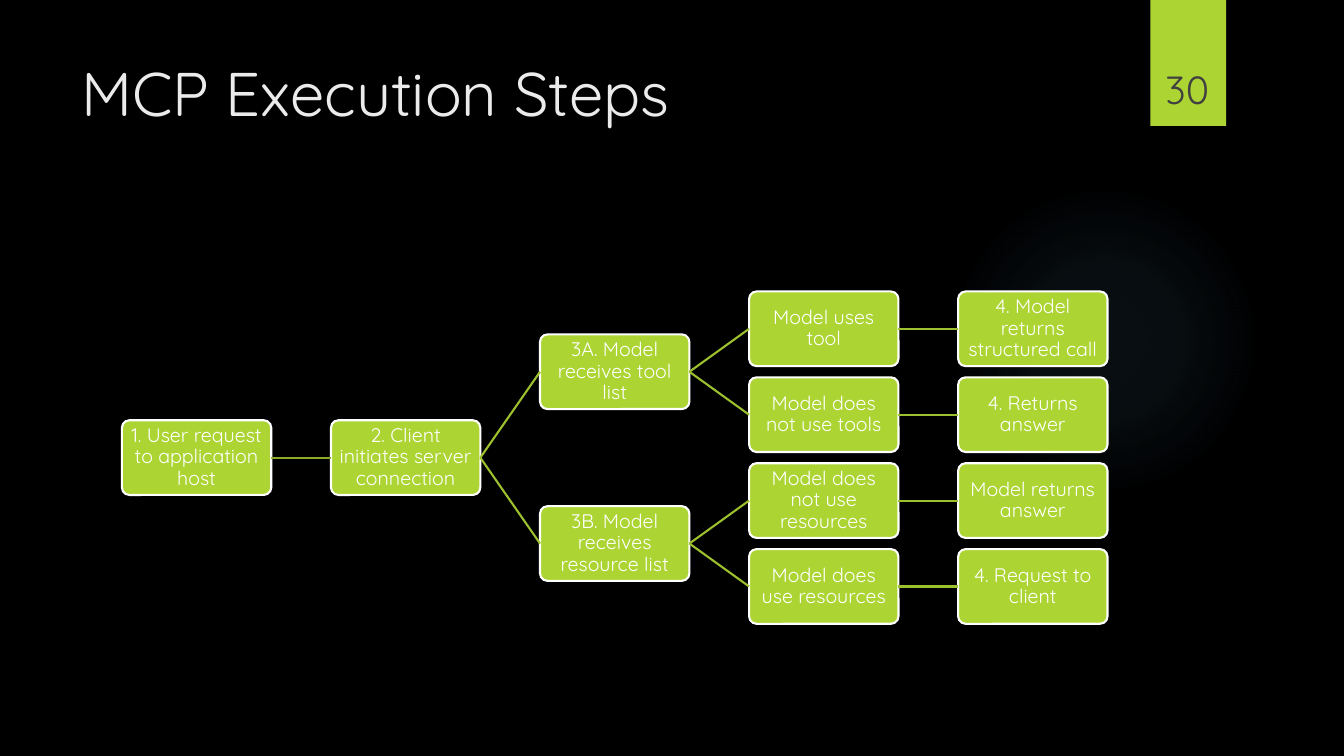
import lxml.etree
import pptx
import pptx.dml.color
import pptx.enum.shapes
import pptx.enum.text
import pptx.oxml
import pptx.oxml.ns
import pptx.util

Pt = pptx.util.Pt
SHAPE = pptx.enum.shapes.MSO_SHAPE
ALIGN = pptx.enum.text.PP_ALIGN
ANCHOR = pptx.enum.text.MSO_ANCHOR

# Content: each step is (text, following steps)
TITLE = "MCP Execution Steps"
NUMBER = "30"
STEPS = ("1. User request to application host", [
    ("2. Client initiates server connection", [
        ("3A. Model receives tool list", [
            ("Model uses tool", [("4. Model returns structured call", [])]),
            ("Model does not use tools", [("4. Returns answer", [])]),
        ]),
        ("3B. Model receives resource list", [
            ("Model does not use resources", [("Model returns answer", [])]),
            ("Model does use resources", [("4. Request to client", [])]),
        ]),
    ]),
])

COLORS = {"back": "000000", "green": "ACD433", "first": "8AAA29", "link": "9CC02E",
          "white": "FFFFFF", "title": "EBEBEB", "number": "404040", "glow": "7AC4F0"}
FONT = "Quicksand"
LEFT, TOP = 87.1, 208.2
BOX_W, BOX_H = 106.7, 53.35
COL_STEP, ROW_STEP = 149.33, 61.35
GLOW_STOPS = [(0, 7), (36, 6), (69, 0)]  # position and opacity, percent


def rgb(name):
    return pptx.dml.color.RGBColor.from_string(COLORS[name])


def add_shape(kind, x, y, w, h, fill, line=None):
    sp = slide.shapes.add_shape(kind, Pt(x), Pt(y), Pt(w), Pt(h))
    sp.shadow.inherit = False
    sp.fill.solid()
    sp.fill.fore_color.rgb = rgb(fill)
    if line:
        sp.line.color.rgb = rgb(line)
        sp.line.width = Pt(1.5)
    else:
        sp.line.fill.background()
    return sp


def set_text(sp, text, size, color, align, anchor, inset=(7.2, 3.6), spacing=1.0):
    tf = sp.text_frame
    side, edge = map(Pt, inset)
    frame = {"word_wrap": True, "vertical_anchor": anchor, "margin_left": side,
             "margin_right": side, "margin_top": edge, "margin_bottom": edge}
    for key, value in frame.items():
        setattr(tf, key, value)
    p = tf.paragraphs[0]
    p.alignment, p.line_spacing = align, spacing
    r = p.add_run()
    r.text = text
    for key, value in {"name": FONT, "size": Pt(size)}.items():
        setattr(r.font, key, value)
    r.font.color.rgb = rgb(color)


def add_glow(x, y, d):
    sp = add_shape(SHAPE.OVAL, x, y, d, d, "glow")
    stops = "".join(
        f'<a:gs pos="{pos * 1000}"><a:srgbClr val="{COLORS["glow"]}">'
        f'<a:alpha val="{alpha * 1000}"/></a:srgbClr></a:gs>' for pos, alpha in GLOW_STOPS)
    grad = pptx.oxml.parse_xml(
        f'<a:gradFill {pptx.oxml.ns.nsdecls("a")}><a:gsLst>{stops}</a:gsLst>'
        '<a:path path="circle"><a:fillToRect l="50000" t="50000" r="50000" b="50000"/></a:path>'
        '</a:gradFill>')
    spPr = sp._element.spPr
    spPr.replace(spPr.find(pptx.oxml.ns.qn("a:solidFill")), grad)


def leaf_count(step):
    return sum(map(leaf_count, step[1])) or 1


def add_link(start, end, color):
    c = slide.shapes.add_connector(pptx.enum.shapes.MSO_CONNECTOR.STRAIGHT, 0, 0, 0, 0)
    c.begin_connect(start, 3)
    c.end_connect(end, 1)
    c.line.color.rgb = rgb(color)
    c.line.width = Pt(1.5)
    lxml.etree.SubElement(c._element.spPr, pptx.oxml.ns.qn("a:effectLst"))


def add_step(step, col=0, first_row=0):
    """Draw a step centred on the rows of its leaves, then its followers."""
    text, followers = step
    row = first_row + (leaf_count(step) - 1) / 2
    sp = add_shape(SHAPE.ROUNDED_RECTANGLE, LEFT + col * COL_STEP, TOP + row * ROW_STEP,
                   BOX_W, BOX_H, "green", "white")
    sp.adjustments[0] = 0.1
    set_text(sp, text, 14, "white", ALIGN.CENTER, ANCHOR.MIDDLE, (2.1, 2.1), 0.9)
    for follower in followers:
        add_link(sp, add_step(follower, col + 1, first_row), "link" if col else "first")
        first_row += leaf_count(follower)
    return sp


prs = pptx.Presentation()
prs.slide_width, prs.slide_height = Pt(960), Pt(540)
slide = prs.slides.add_slide(prs.slide_layouts[6])
slide.background.fill.solid()
slide.background.fill.fore_color.rgb = rgb("back")

# Backdrop and number tab
add_glow(677.5, 131.8, 221.8)
add_shape(SHAPE.RECTANGLE, 821.8, 0, 54, 90, "green")

# Title and slide number
sp = slide.shapes.add_textbox(Pt(51), Pt(36), Pt(741), Pt(110))
set_text(sp, TITLE, 44, "title", ALIGN.LEFT, ANCHOR.TOP)
sp = slide.shapes.add_textbox(Pt(815), Pt(23), Pt(66.2), Pt(60.5))
set_text(sp, NUMBER, 28, "number", ALIGN.CENTER, ANCHOR.BOTTOM)

# Step tree
add_step(STEPS)

prs.save("out.pptx")
